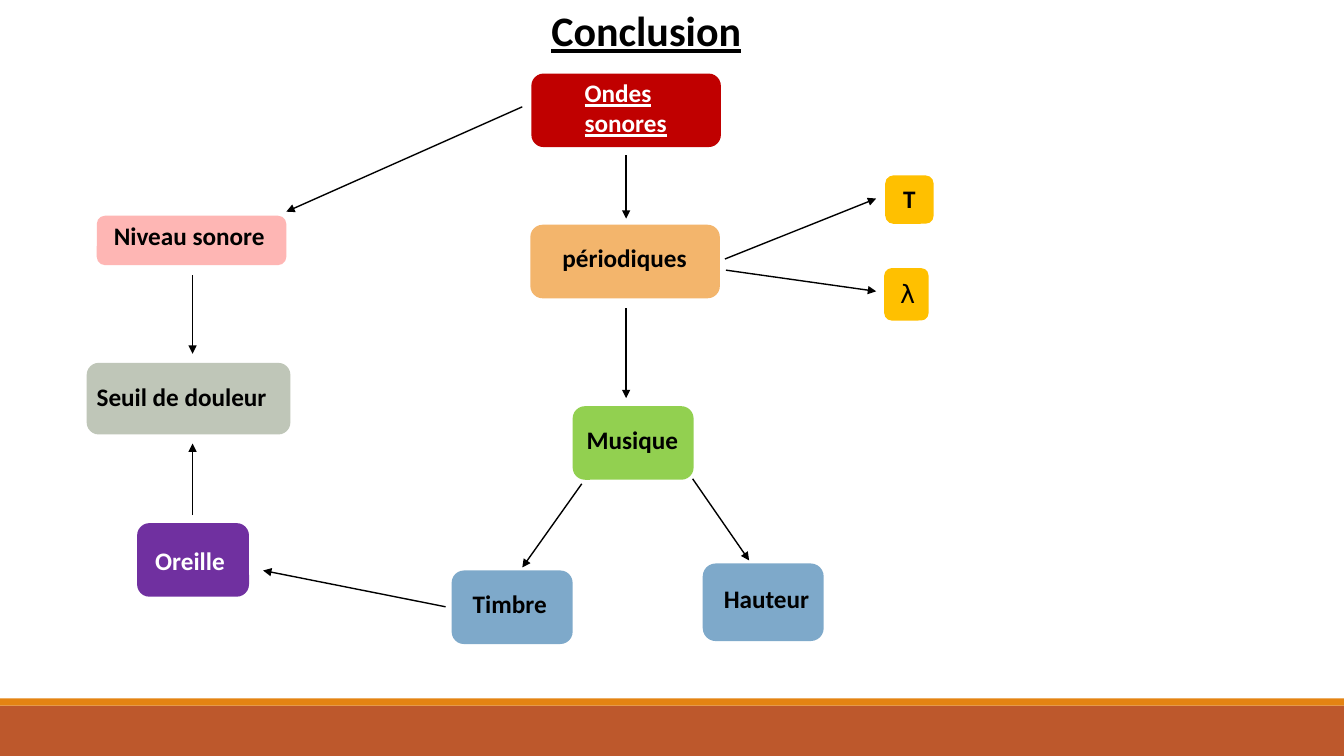
from pptx import Presentation
from pptx.dml.color import RGBColor
from pptx.enum.shapes import MSO_CONNECTOR as Conn, MSO_SHAPE as Shape
from pptx.oxml.ns import qn
from pptx.util import Inches, Pt
from lxml.etree import SubElement

# Content: bands at the foot (left, top, width, height, fill)
BANDS = [(0, 7, 13.33, 0.5, "BD582C"), (0, 6.93, 13.33, 0.07, "E48312")]

TITLE = ("Conclusion", (5.37, 0, 4.12, 0.61))
LABEL = dict(size=Pt(18), name="Calibri", bold=True)
HEADING = LABEL | dict(underline=True)

# Nodes: text, box, fill, label box, text colour, font
NODES = [
    ("Ondes sonores", (5.27, 0.73, 1.88, 0.73), "C00000",
     (5.7, 0.72, 1.6, 0.71), "FFFFFF", HEADING),
    ("périodiques", (5.26, 2.23, 1.88, 0.73), "F3B56C",
     (5.48, 2.36, 1.44, 0.4), "000000", LABEL),
    ("T", (8.78, 1.74, 0.48, 0.48), "FFC000",
     (8.86, 1.77, 0.4, 0.4), "000000", LABEL),
    ("λ", (8.77, 2.66, 0.44, 0.52), "FFC000",
     (8.83, 2.71, 0.51, 0.4), "000000",
     LABEL | dict(name="DejaVu Sans Mono", bold=False)),
    ("Musique", (5.68, 4.03, 1.2, 0.73), "92D050",
     (5.72, 4.16, 1.52, 0.4), "000000", LABEL),
    ("Timbre", (4.48, 5.66, 1.2, 0.73), "7EA9CA",
     (4.59, 5.79, 1.98, 0.4), "000000", LABEL),
    ("Hauteur", (6.97, 5.59, 1.2, 0.77), "7EA9CA",
     (7.08, 5.74, 1.98, 0.4), "000000", LABEL),
    ("Niveau sonore", (0.96, 2.14, 1.88, 0.49), "FEB6B4",
     (1.03, 2.14, 1.88, 0.4), "000000", LABEL),
    ("Seuil de douleur", (0.86, 3.6, 2.02, 0.71), "BFC6B8",
     (0.86, 3.73, 2.21, 0.4), "000000", LABEL),
    ("Oreille", (1.36, 5.19, 1.11, 0.73), "7030A0",
     (1.44, 5.36, 0.95, 0.4), "FFFFFF", LABEL),
]

# Arrows: start x, start y, end x, end y
ARROWS = [
    (5.18, 1.06, 2.84, 2.1),    # Ondes sonores to Niveau sonore
    (6.21, 1.54, 6.21, 2.17),   # Ondes sonores to périodiques
    (7.19, 2.57, 8.69, 1.97),   # périodiques to T
    (7.2, 2.68, 8.69, 2.89),    # périodiques to λ
    (6.21, 3.06, 6.21, 3.95),   # périodiques to Musique
    (5.77, 4.8, 5.18, 5.63),    # Musique to Timbre
    (6.87, 4.75, 7.43, 5.56),   # Musique to Hauteur
    (4.42, 6.02, 2.61, 5.66),   # Timbre to Oreille
    (1.91, 5.11, 1.91, 4.4),    # Oreille to Seuil de douleur
    (1.91, 2.73, 1.91, 3.51),   # Niveau sonore to Seuil de douleur
]


def color(hex_code):
    return RGBColor.from_string(hex_code)


def inches(values):
    return [Inches(v) for v in values]


def add_box(s, kind, box, fill):
    sp = s.shapes.add_shape(kind, *inches(box))
    sp.shadow.inherit = False
    sp.fill.solid()
    sp.fill.fore_color.rgb = color(fill)
    sp.line.fill.background()


def add_text(s, text, box, hex_code, font):
    tf = s.shapes.add_textbox(*inches(box)).text_frame
    tf.word_wrap = True
    r = tf.paragraphs[0].add_run()
    r.text = text
    r.font.color.rgb = color(hex_code)
    for key, value in font.items():
        setattr(r.font, key, value)


def add_arrow(s, ends):
    line = s.shapes.add_connector(Conn.STRAIGHT, *inches(ends))
    line.line.width = Pt(1)
    line.line.color.rgb = color("000000")
    SubElement(line.line._get_or_add_ln(), qn("a:tailEnd"), type="triangle")
    SubElement(line._element.spPr, qn("a:effectLst"))


def main():
    prs = Presentation()
    prs.slide_width, prs.slide_height = inches((13.33, 7.5))
    s = prs.slides.add_slide(prs.slide_layouts[6])

    # Foot and title
    for *box, fill in BANDS:
        add_box(s, Shape.RECTANGLE, box, fill)
    add_text(s, *TITLE, "000000", HEADING | dict(size=Pt(30)))

    # Concept map
    for text, box, fill, label_box, text_color, font in NODES:
        add_box(s, Shape.ROUNDED_RECTANGLE, box, fill)
        add_text(s, text, label_box, text_color, font)
    for ends in ARROWS:
        add_arrow(s, ends)

    prs.save("out.pptx")


if __name__ == "__main__":
    main()
